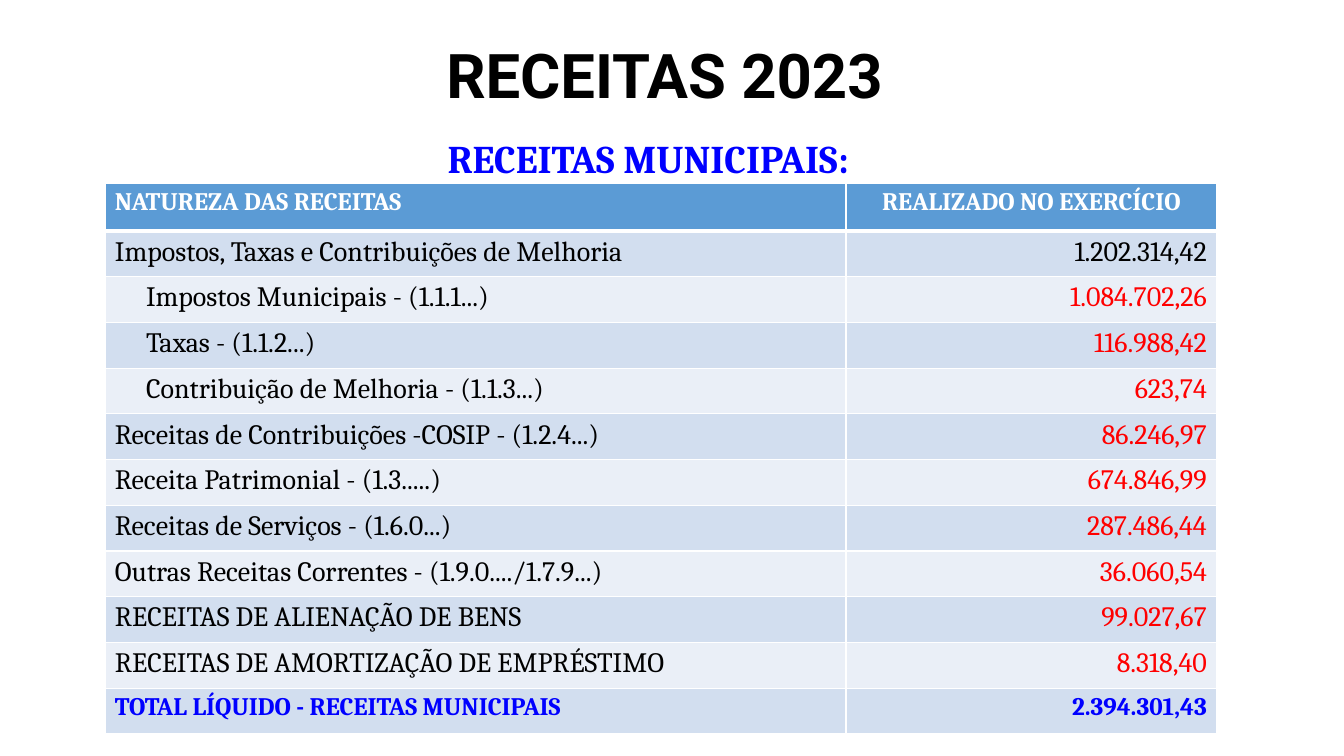
import pptx
import pptx.dml.color
import pptx.enum.text
import pptx.oxml
import pptx.oxml.ns
import pptx.util

PIXEL = 914400 / 100.8
ALIGN = pptx.enum.text.PP_ALIGN
ANCHOR = pptx.enum.text.MSO_ANCHOR


def px(count):
    return pptx.util.Emu(round(count * PIXEL))


def write(para, text, font, size, color, bold, align):
    para.alignment = align
    span = para.add_run()
    span.text = text
    formats = {"name": font, "size": pptx.util.Pt(size), "bold": bold}
    for name, value in formats.items():
        setattr(span.font, name, value)
    span.font.color.rgb = pptx.dml.color.RGBColor.from_string(color)


deck = pptx.Presentation()
deck.slide_width, deck.slide_height = px(1344), px(756)
page = deck.slides.add_slide(deck.slide_layouts[1])

headings = [
    (page.shapes.title, (93, 23, 1159, 112), ANCHOR.MIDDLE, 0,
     "RECEITAS 2023 ", "Roboto", 44, "000000"),
    (page.placeholders[1], (93, 135, 1119, 62), ANCHOR.TOP, 10,
     "RECEITAS MUNICIPAIS: ", "Cambria", 28, "0000FF"),
]
for box, place, anchor, space, text, font, size, color in headings:
    for name, value in zip(("left", "top", "width", "height"), place):
        setattr(box, name, px(value))
    frame = box.text_frame
    frame.auto_size = pptx.enum.text.MSO_AUTO_SIZE.NONE
    frame.vertical_anchor = anchor
    para = frame.paragraphs[0]
    para.line_spacing = 0.9
    para.space_before = pptx.util.Pt(space)
    write(para, text, font, size, color, True, ALIGN.CENTER)
    settings = para._p.get_or_add_pPr()
    settings.set("marL", "0")
    settings.set("indent", "0")
    settings.append(pptx.oxml.parse_xml(
        f'<a:buNone {pptx.oxml.ns.nsdecls("a")}/>'))

revenues = [
    ("NATUREZA DAS RECEITAS", "REALIZADO NO EXERCÍCIO", "heading"),
    ("Impostos, Taxas e Contribuições de Melhoria", "1.202.314,42", "group"),
    ("Impostos Municipais - (1.1.1...)", "1.084.702,26", "detail"),
    ("Taxas - (1.1.2...)", "116.988,42", "detail"),
    ("Contribuição de Melhoria - (1.1.3...)", "623,74", "detail"),
    ("Receitas de Contribuições -COSIP - (1.2.4...)", "86.246,97", "item"),
    ("Receita Patrimonial - (1.3.....)", "674.846,99", "item"),
    ("Receitas de Serviços - (1.6.0...)", "287.486,44", "item"),
    ("Outras Receitas Correntes - (1.9.0..../1.7.9...)", "36.060,54", "item"),
    ("RECEITAS DE ALIENAÇÃO DE BENS", "99.027,67", "item"),
    ("RECEITAS DE AMORTIZAÇÃO DE EMPRÉSTIMO", "8.318,40", "item"),
    ("TOTAL LÍQUIDO - RECEITAS MUNICIPAIS", "2.394.301,43", "total"),
]
styles = {
    "heading": (18, True, ("FFFFFF", "FFFFFF"), ALIGN.CENTER, 10),
    "group": (20, False, ("000000", "000000"), ALIGN.RIGHT, 10),
    "detail": (20, False, ("000000", "FF0000"), ALIGN.RIGHT, 41),
    "item": (20, False, ("000000", "FF0000"), ALIGN.RIGHT, 10),
    "total": (18, True, ("0000FF", "0000FF"), ALIGN.RIGHT, 10),
}

table = page.shapes.add_table(
    len(revenues), 2, px(105), px(183), px(1112), px(551)).table
for column, width in zip(table.columns, (741, 371)):
    column.width = px(width)

for index, (label, amount, kind) in enumerate(revenues):
    size, bold, colors, amount_align, indent = styles[kind]
    table.rows[index].height = px(48) if index == 0 else px(503) // 11
    fill = "5B9BD5" if index == 0 else ("EAEFF7", "D2DEEF")[index % 2]
    borders = {"lnL": 1, "lnR": 1, "lnT": 3 if index == 1 else 1,
               "lnB": 3 if index == 0 else 1}
    for side, text in enumerate((label, amount)):
        cell = table.cell(index, side)
        cell.margin_left = px(10 if side else indent)
        write(cell.text_frame.paragraphs[0], text, "Cambria", size,
              colors[side], bold, amount_align if side else ALIGN.LEFT)
        for edge, points in borders.items():
            cell._tc.get_or_add_tcPr().append(pptx.oxml.parse_xml(
                f'<a:{edge} {pptx.oxml.ns.nsdecls("a")} w="{points * 12700}">'
                f'<a:solidFill><a:srgbClr val="FFFFFF"/></a:solidFill>'
                f'</a:{edge}>'))
        cell.fill.solid()
        cell.fill.fore_color.rgb = pptx.dml.color.RGBColor.from_string(fill)

deck.save("out.pptx")
